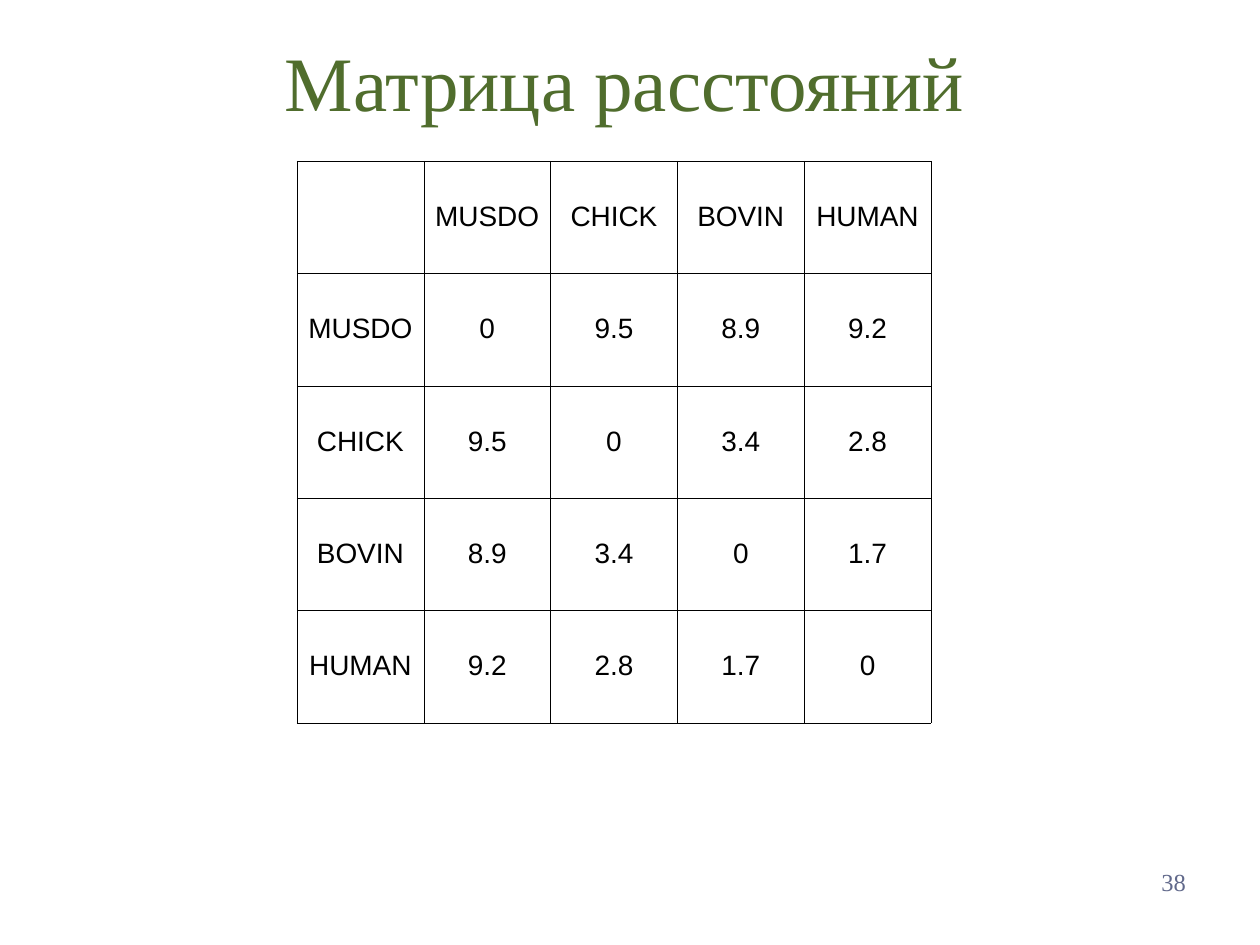
from lxml.etree import SubElement
from pptx import Presentation
from pptx.dml.color import RGBColor
from pptx.enum.text import MSO_ANCHOR, PP_ALIGN
from pptx.oxml.ns import qn
from pptx.util import Emu, Pt

PX = 914400 / 126
GREEN = RGBColor(0x50, 0x6D, 0x2D)
BLACK = RGBColor(0x00, 0x00, 0x00)
SLATE = RGBColor(0x61, 0x69, 0x8B)


def px(length):
    return Emu(round(length * PX))


def write(frame, text, *, size, font, color, align, anchor, margins, spacing=None):
    frame.word_wrap = True
    frame.vertical_anchor = anchor
    frame.margin_left, frame.margin_top, frame.margin_right, frame.margin_bottom = map(px, margins)
    para = frame.paragraphs[0]
    para.alignment = align
    para.line_spacing = spacing
    span = para.add_run()
    span.text = text
    span.font.size = Pt(size)
    span.font.name = font
    span.font.color.rgb = color


deck = Presentation()
deck.slide_width, deck.slide_height = px(1260), px(945)
page = deck.slides.add_slide(deck.slide_layouts[6])

# Title
title_box = page.shapes.add_textbox(px(58), px(8), px(1134), px(146))
write(title_box.text_frame, "Матрица расстояний", size=44, font="Times New Roman",
      color=GREEN, align=PP_ALIGN.CENTER, anchor=MSO_ANCHOR.MIDDLE, margins=(13, 5, 13, 6))

# Distance matrix
species = ["MUSDO", "CHICK", "BOVIN", "HUMAN"]
distances = [
    ["0", "9.5", "8.9", "9.2"],
    ["9.5", "0", "3.4", "2.8"],
    ["8.9", "3.4", "0", "1.7"],
    ["9.2", "2.8", "1.7", "0"],
]
rows = [["", *species]] + [[name, *values] for name, values in zip(species, distances)]
count = len(rows)
matrix = page.shapes.add_table(count, count, px(297), px(161), px(634), px(562)).table
matrix.first_row = False
matrix.horz_banding = False

for row_index, row in enumerate(rows):
    for column_index, text in enumerate(row):
        cell = matrix.cell(row_index, column_index)
        # Thin border on every side, no fill
        properties = cell._tc.get_or_add_tcPr()
        for side in ("a:lnL", "a:lnR", "a:lnT", "a:lnB"):
            line = SubElement(properties, qn(side), w=str(Pt(0.28)))
            fill = SubElement(line, qn("a:solidFill"))
            SubElement(fill, qn("a:srgbClr"), val=str(BLACK))
        cell.fill.background()
        if text:
            write(cell.text_frame, text, size=16, font="Arial", color=BLACK,
                  align=PP_ALIGN.CENTER, anchor=MSO_ANCHOR.MIDDLE,
                  margins=(5, 6, 5, 5), spacing=0.93)
            cell.vertical_anchor = MSO_ANCHOR.MIDDLE
            cell.margin_left = cell.margin_right = cell.margin_bottom = px(5)
            cell.margin_top = px(6)

# Page number
number_box = page.shapes.add_textbox(px(903), px(861), px(294), px(66))
write(number_box.text_frame, "38", size=14, font="Times New Roman", color=SLATE,
      align=PP_ALIGN.RIGHT, anchor=MSO_ANCHOR.TOP, margins=(11, 6, 11, 6))

deck.save("out.pptx")
